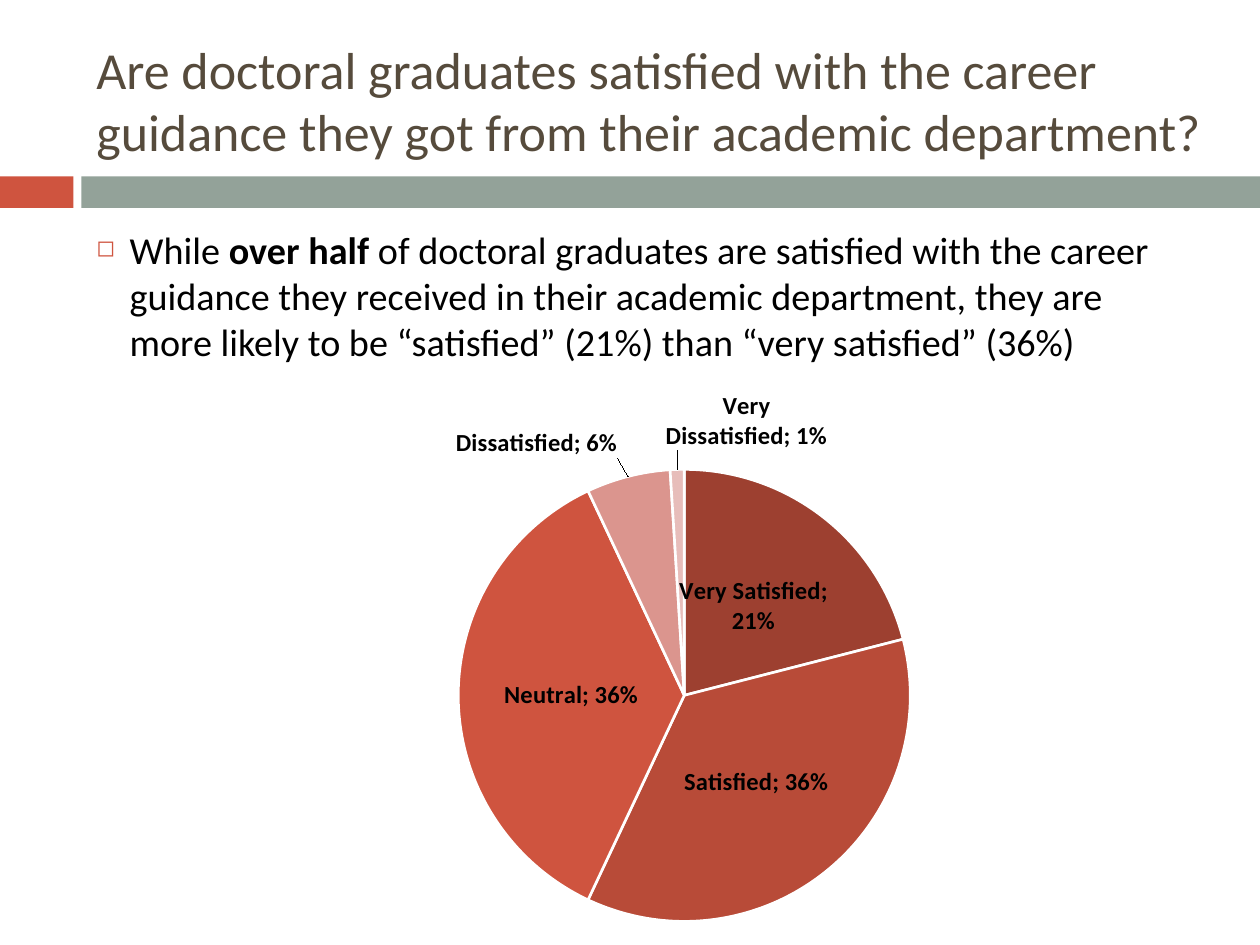
from lxml import etree
from pptx import Presentation
from pptx.chart.data import CategoryChartData
from pptx.dml.color import RGBColor
from pptx.enum.chart import XL_CHART_TYPE as ChartType, XL_LABEL_POSITION as LabelPosition
from pptx.enum.shapes import MSO_SHAPE as Shape
from pptx.enum.text import MSO_ANCHOR as Anchor
from pptx.oxml import parse_xml
from pptx.oxml.ns import nsdecls, qn
from pptx.util import Pt

FONT = "Calibri"
RED = RGBColor(0xCF, 0x54, 0x3F)
SAGE = RGBColor(0x93, 0xA2, 0x99)
BROWN = RGBColor(0x56, 0x4B, 0x3C)
BLACK = RGBColor(0, 0, 0)
WHITE = RGBColor(0xFF, 0xFF, 0xFF)


def add_text(left, top, width, height, size, color, spans):
    """Add a wrapped box with one paragraph of (text, bold) spans."""
    box = page.shapes.add_textbox(Pt(left), Pt(top), Pt(width), Pt(height))
    box.text_frame.word_wrap = True
    para = box.text_frame.paragraphs[0]
    for text, bold in spans:
        span = para.add_run()
        span.text = text
        span.font.name = FONT
        span.font.size = Pt(size)
        span.font.bold = bold
        span.font.color.rgb = color
    return box


def manual_layout(x, y, extra=""):
    """Return a chart layout element; x and y are fractions of the chart."""
    return parse_xml(
        f'<c:layout {nsdecls("c")}><c:manualLayout>{extra}'
        f'<c:x val="{x}"/><c:y val="{y}"/></c:manualLayout></c:layout>'
    )


deck = Presentation()
deck.slide_width, deck.slide_height = Pt(720), Pt(540)
page = deck.slides.add_slide(deck.slide_layouts[6])

# Divider band under the title
for left, width, color in [(0, 42, RED), (46.5, 673.5, SAGE)]:
    band = page.shapes.add_shape(Shape.RECTANGLE, Pt(left), Pt(100.8), Pt(width), Pt(18))
    band.shadow.inherit = False
    band.fill.solid()
    band.fill.fore_color.rgb = color
    band.line.fill.background()

title = add_text(48, 18, 662.4, 78, 29.7, BROWN, [
    ("Are doctoral graduates satisfied with the career guidance "
     "they got from their academic department?", False),
])
title.text_frame.vertical_anchor = Anchor.MIDDLE

finding = add_text(48, 126, 642, 90, 21.8, BLACK, [
    ("While ", False),
    ("over half ", True),
    ("of doctoral graduates are satisfied with the career guidance they received "
     "in their academic department, they are more likely to be “satisfied” (21%) "
     "than “very satisfied” (36%)", False),
])
para_format = finding.text_frame.paragraphs[0]._p.get_or_add_pPr()
para_format.set("marL", str(Pt(19)))
para_format.set("indent", str(-Pt(19)))
bullet_color = etree.SubElement(para_format, qn("a:buClr"))
etree.SubElement(bullet_color, qn("a:srgbClr"), val=str(RED))
etree.SubElement(para_format, qn("a:buSzPct"), val="60000")
etree.SubElement(para_format, qn("a:buChar"), char="◻")

# Satisfaction pie: answer, share, slice colour, label offset when outside the pie
answers = [
    ("Very Satisfied", 0.21, RGBColor(0x9D, 0x40, 0x30), None),
    ("Satisfied", 0.36, RGBColor(0xB8, 0x4B, 0x38), None),
    ("Neutral", 0.36, RED, None),
    ("Dissatisfied", 0.06, RGBColor(0xDB, 0x95, 0x8E), (-0.01, -0.02)),
    ("Very Dissatisfied", 0.01, RGBColor(0xE7, 0xBD, 0xBA), (0.08, -0.02)),
]
data = CategoryChartData(number_format="0%")
data.categories = [answer[0] for answer in answers]
data.add_series("Series 1", [answer[1] for answer in answers])
chart = page.shapes.add_chart(
    ChartType.PIE, Pt(147.6), Pt(212.4), Pt(496.8), Pt(321.8), data
).chart
chart.has_legend = False
chart.has_title = False
chart.font.name = FONT
chart.font.size = Pt(10)
chart.font.color.rgb = BLACK

plot_area = chart._chartSpace.chart.plotArea
for old_layout in plot_area.findall(qn("c:layout")):
    plot_area.remove(old_layout)
plot_layout = manual_layout(
    0.23, 0.17,
    '<c:layoutTarget val="inner"/><c:xMode val="edge"/><c:yMode val="edge"/>',
)
for side, share in [("w", 0.52), ("h", 0.81)]:
    etree.SubElement(plot_layout[0], qn(f"c:{side}"), val=str(share))
plot_area.insert(0, plot_layout)

series = chart.plots[0].series[0]
labels = series.data_labels
labels.show_value = True
labels.show_category_name = True
labels.show_percentage = False
labels.number_format = "0%"
labels.number_format_is_linked = False
label_fonts = [labels.font]

for index, (_, _, color, offset) in enumerate(answers):
    point = series.points[index]
    point.format.fill.solid()
    point.format.fill.fore_color.rgb = color
    point.format.line.color.rgb = WHITE
    point.format.line.width = Pt(1.5)
    label = point.data_label
    label_fonts.append(label.font)
    label.position = LabelPosition.OUTSIDE_END if offset else LabelPosition.CENTER
    label_xml = labels._element.findall(qn("c:dLbl"))[index]
    label_xml.find(qn("c:showCatName")).set("val", "1")
    if offset:
        label_xml.insert(1, manual_layout(*offset))

for font in label_fonts:
    font.name = FONT
    font.size = Pt(14)
    font.bold = True
    font.color.rgb = BLACK

leader_lines = labels._element.find(qn("c:showLeaderLines"))
if leader_lines is None:
    leader_lines = etree.SubElement(labels._element, qn("c:showLeaderLines"))
leader_lines.set("val", "1")

deck.save("out.pptx")
